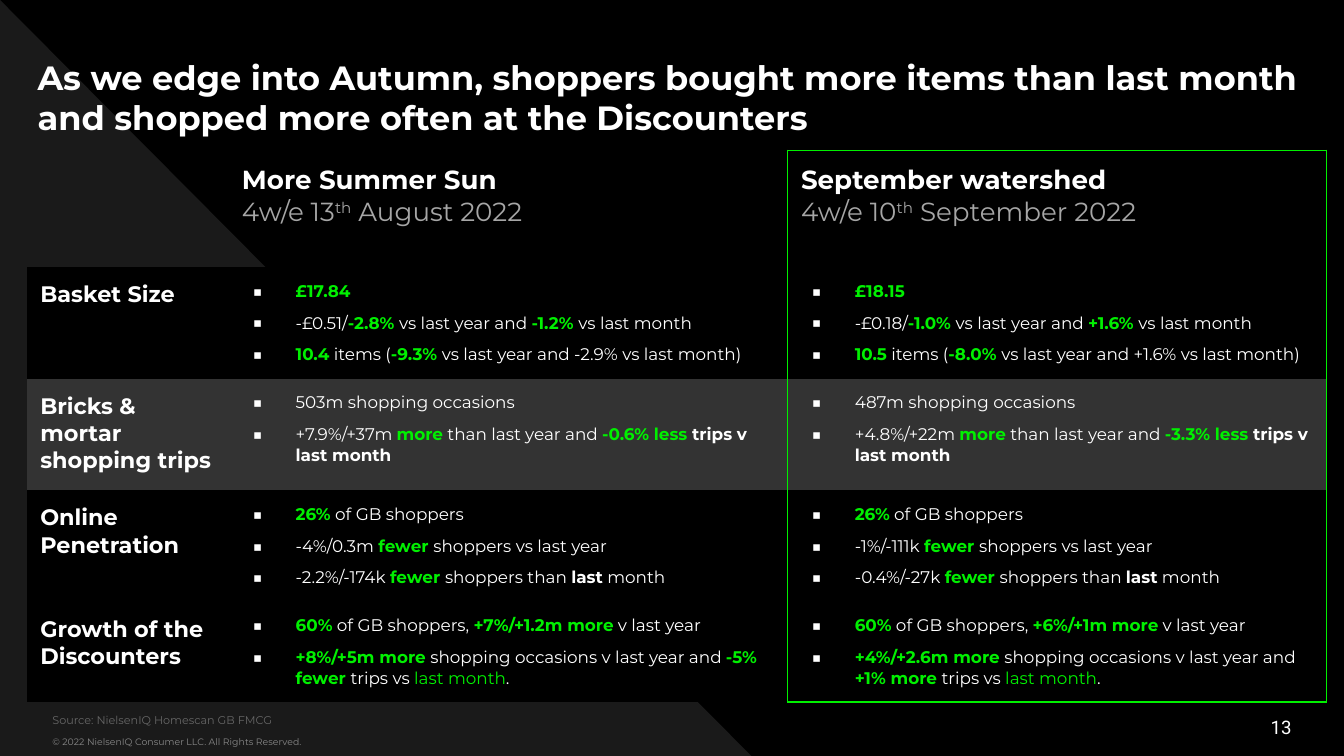
from lxml.etree import SubElement
from pptx import Presentation
from pptx.dml.color import RGBColor
from pptx.enum.shapes import MSO_SHAPE
from pptx.enum.text import MSO_ANCHOR, MSO_AUTO_SIZE, PP_ALIGN
from pptx.oxml.ns import qn
from pptx.util import Inches, Pt

WIDTH = 10
HEIGHT = WIDTH * 9 / 16
GREEN, WHITE, BLACK, BAND, GREY = "00F000", "FFFFFF", "000000", "333333", "A6A6A6"
FONT = "Montserrat"
NO_STYLE_NO_GRID = "{2D5ABB26-0587-4C30-8999-92F81FD0307C}"

COLUMNS = [1.5, 4.16, 4.01]
ROWS = [0.87, 0.83, 0.83, 0.83, 0.74]

# A leading mark styles a text piece: (colour, bold)
STYLES = {"*": (GREEN, True), "!": (WHITE, True), "~": (GREEN, False)}

HEADERS = [
    ("More Summer Sun", "4w/e 13", " August 2022"),
    ("September watershed", "4w/e 10", " September 2022"),
]

# Row label, row fill, bullets of August, bullets of September
CONTENT = [
    ("Basket Size", BLACK,
     ["*£17.84",
      "-£0.51/|*-2.8% |vs last year and |*-1.2% |vs last month",
      "*10.4| items (|*-9.3% |vs last year and -2.9% vs last month)"],
     ["*£18.15",
      "-£0.18/|*-1.0% |vs last year and |*+1.6% |vs last month",
      "*10.5| items (|*-8.0% |vs last year and +1.6% vs last month)"]),
    ("Bricks & mortar shopping trips", BAND,
     ["503m shopping occasions",
      "+7.9%/+37m |*more| than last year and |*-0.6% less|! trips v last month"],
     ["487m shopping occasions",
      "+4.8%/+22m |*more| than last year and |*-3.3% less|! trips v last month"]),
    ("Online Penetration", BLACK,
     ["*26%| of GB shoppers",
      "-4%/0.3m |*fewer |shoppers vs last year",
      "-2.2%/-174k |*fewer |shoppers than |!last| month"],
     ["*26%| of GB shoppers",
      "-1%/-111k |*fewer |shoppers vs last year",
      "-0.4%/-27k |*fewer |shoppers than |!last| month"]),
    ("Growth of the Discounters", BLACK,
     ["*60%| of GB shoppers, |*+7%/+1.2m more| v last year",
      "*+8%/+5m more |shopping occasions v last year and |*-5% fewer |trips vs |~last month|."],
     ["*60%| of GB shoppers, |*+6%/+1m more| v last year",
      "*+4%/+2.6m more |shopping occasions v last year and |*+1% more |trips vs |~last month|."]),
]


def rgb(value):
    return RGBColor.from_string(value)


def set_font(font, size, color, bold=False, name=FONT):
    font.name, font.size, font.bold = name, Pt(size), bold
    font.color.rgb = rgb(color)


def write_box(shape, box, text, size, color, bold=False, name=FONT,
              align=PP_ALIGN.LEFT, anchor=MSO_ANCHOR.TOP, padding=0.1):
    """Place a text shape or placeholder and give it one paragraph."""
    shape.left, shape.top, shape.width, shape.height = map(Inches, box)
    frame = shape.text_frame
    frame.word_wrap, frame.auto_size = True, MSO_AUTO_SIZE.NONE
    frame.vertical_anchor = anchor
    frame.margin_left = frame.margin_right = 0
    frame.margin_top = frame.margin_bottom = Inches(padding)
    frame.text = text
    paragraph = frame.paragraphs[0]
    paragraph.alignment = align
    paragraph.space_before = Pt(0)
    set_font(paragraph.font, size, color, bold, name)


def add_backdrop(slide):
    slide.background.fill.solid()
    slide.background.fill.fore_color.rgb = rgb(BLACK)
    triangle = slide.shapes.add_shape(MSO_SHAPE.RIGHT_TRIANGLE, 0, 0,
                                      Inches(5.59), Inches(HEIGHT))
    triangle.shadow.inherit = False
    triangle.fill.solid()
    triangle.fill.fore_color.rgb = rgb("1A1A1A")
    triangle.line.fill.background()
    # Send it behind the placeholders
    slide.shapes.title._element.addprevious(triangle._element)


def add_border(cell, sides):
    """Draw green lines on the named sides, given in the order L, R, T, B."""
    properties = cell._tc.get_or_add_tcPr()
    for side in sides:
        line = SubElement(properties, qn(f"a:ln{side}"), w=str(Pt(1)))
        SubElement(SubElement(line, qn("a:solidFill")), qn("a:srgbClr"), val=GREEN)


def format_cell(cell, fill, sides=""):
    add_border(cell, sides)
    cell.margin_left = cell.margin_right = Inches(0.1)
    cell.margin_top = cell.margin_bottom = Inches(0.1)
    if fill:
        cell.fill.solid()
        cell.fill.fore_color.rgb = rgb(fill)
    else:
        cell.fill.background()


def write_label(cell, text, size):
    cell.text_frame.text = text
    set_font(cell.text_frame.paragraphs[0].font, size, WHITE, True)


def write_header(cell, title, day, month):
    write_label(cell, title, 14)
    paragraph = cell.text_frame.add_paragraph()
    for text in (day, "th", month):
        run = paragraph.add_run()
        run.text = text
        if text == "th":
            run._r.get_or_add_rPr().set("baseline", "30000")
    set_font(paragraph.font, 14, GREY)


def add_bullet(paragraph):
    properties = paragraph._p.get_or_add_pPr()
    properties.set("marL", str(Inches(0.4)))
    properties.set("indent", str(Inches(-0.32)))
    SubElement(SubElement(properties, qn("a:buClr")), qn("a:srgbClr"), val=WHITE)
    SubElement(properties, qn("a:buFont"), typeface=FONT)
    SubElement(properties, qn("a:buChar"), char="■")


def write_bullets(cell, lines):
    frame = cell.text_frame
    for index, line in enumerate(lines):
        paragraph = frame.add_paragraph() if index else frame.paragraphs[0]
        add_bullet(paragraph)
        paragraph.space_before = Pt(6 if index else 0)
        for piece in line.split("|"):
            color, bold = STYLES.get(piece[0], (WHITE, False))
            run = paragraph.add_run()
            run.text = piece[1:] if piece[0] in STYLES else piece
            set_font(run.font, 9, color, bold)


def add_comparison(slide):
    frame = slide.shapes.add_table(len(ROWS), len(COLUMNS), Inches(0.2), Inches(1.12),
                                   Inches(sum(COLUMNS)), Inches(sum(ROWS)))
    table = frame.table
    table.first_row = table.horz_banding = False
    table._tbl.tblPr.find(qn("a:tableStyleId")).text = NO_STYLE_NO_GRID
    for column, width in zip(table.columns, COLUMNS):
        column.width = Inches(width)
    for row, height in zip(table.rows, ROWS):
        row.height = Inches(height)

    # The green frame runs around the last column
    last_row = len(ROWS) - 1
    for row, fill in enumerate([None] + [entry[1] for entry in CONTENT]):
        edge = {0: "T", last_row: "B"}.get(row, "")
        for column, sides in enumerate(("", "R", "LR" + edge)):
            format_cell(table.cell(row, column), fill, sides)

    for column, header in enumerate(HEADERS, 1):
        write_header(table.cell(0, column), *header)
    for row, (label, _, *months) in enumerate(CONTENT, 1):
        write_label(table.cell(row, 0), label, 12)
        for column, lines in enumerate(months, 1):
            write_bullets(table.cell(row, column), lines)


def main():
    presentation = Presentation()
    presentation.slide_width, presentation.slide_height = Inches(WIDTH), Inches(HEIGHT)
    slide = presentation.slides.add_slide(presentation.slide_layouts[0])
    add_backdrop(slide)

    # Title and source
    write_box(slide.shapes.title, (0.28, 0.32, 9.76, 0.74),
              "As we edge into Autumn, shoppers bought more items than last month "
              "and shopped more often at the Discounters", 18, WHITE, bold=True)
    write_box(slide.placeholders[1], (0.39, 5.31, 8.92, 0.2),
              "Source: NielsenIQ Homescan GB FMCG", 6, "666666", anchor=MSO_ANCHOR.BOTTOM)

    # Copyright and page number
    write_box(slide.shapes.add_textbox(0, 0, 0, 0), (0.39, 5.43, 5.54, 0.2),
              "© 2022 NielsenIQ Consumer LLC. All Rights Reserved.", 5, "888888", padding=0.05)
    write_box(slide.shapes.add_textbox(0, 0, 0, 0), (7.36, 5.26, 2.25, 0.3), "13", 10, WHITE,
              name="Roboto", align=PP_ALIGN.RIGHT, anchor=MSO_ANCHOR.MIDDLE, padding=0.05)

    add_comparison(slide)
    presentation.save("out.pptx")


if __name__ == "__main__":
    main()
